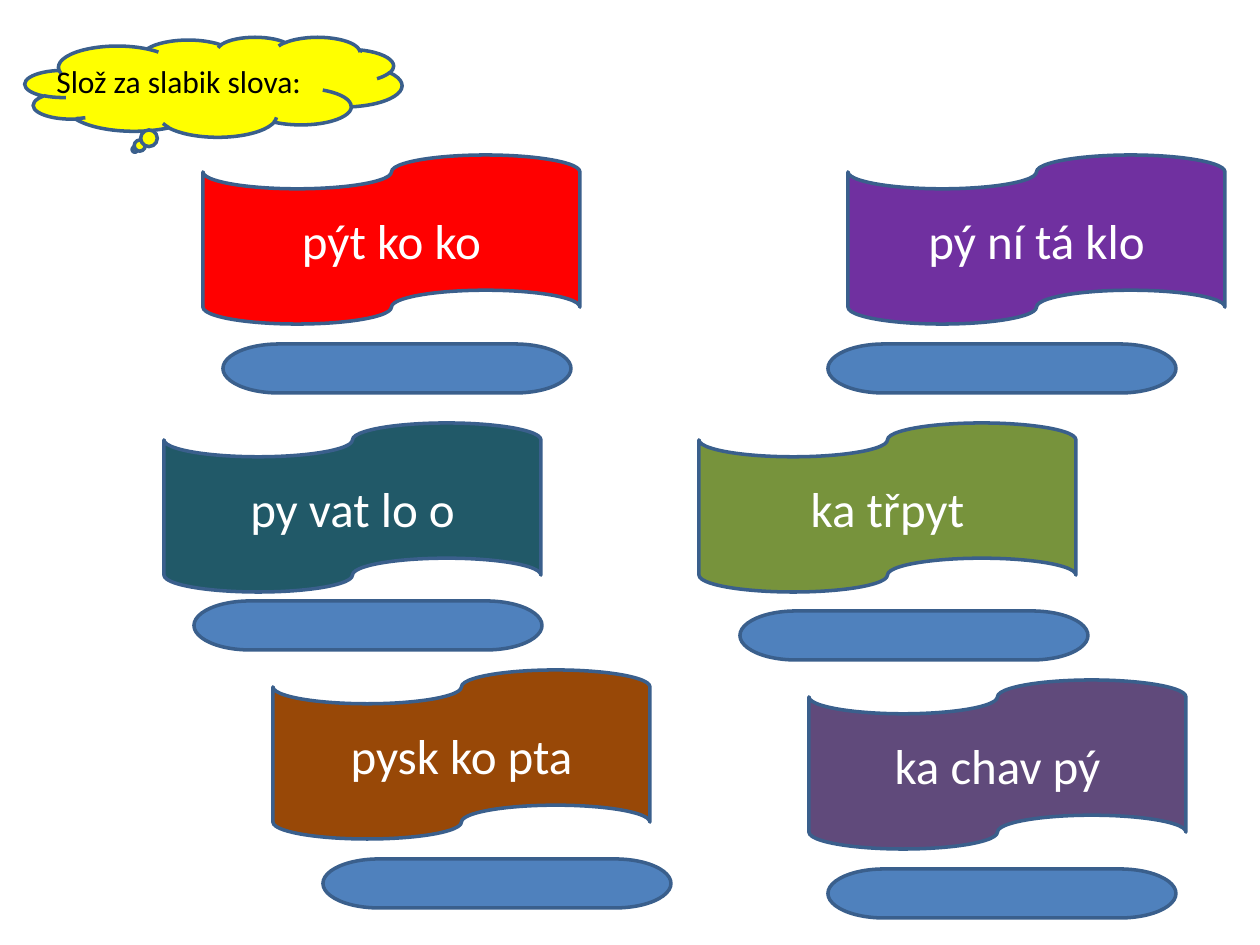
from pptx import Presentation
from pptx.dml.color import RGBColor
from pptx.enum.shapes import MSO_SHAPE
from pptx.enum.text import MSO_ANCHOR, MSO_AUTO_SIZE, PP_ALIGN
from pptx.util import Emu, Pt

CLOUD = MSO_SHAPE.CLOUD_CALLOUT
TAPE = MSO_SHAPE.FLOWCHART_PUNCHED_TAPE
TERMINATOR = MSO_SHAPE.FLOWCHART_TERMINATOR
MIDDLE = MSO_ANCHOR.MIDDLE
CENTER = PP_ALIGN.CENTER
FIT_SHAPE = MSO_AUTO_SIZE.SHAPE_TO_FIT_TEXT

PX_PER_INCH = 126
FONT = "Calibri"
OUTLINE = "3A5F8C"
TAPE_SIZE = (377, 169)
ANSWER_SIZE = (348, 49)

# Syllables, fill, banner position, answer field position
WORDS = [
    ("pýt ko ko", "FF0000", (203, 155), (223, 344)),
    ("pý ní tá klo", "7030A0", (848, 155), (828, 344)),
    ("py vat lo o", "215968", (164, 423), (194, 601)),
    ("ka třpyt", "77933C", (699, 423), (740, 611)),
    ("pysk ko pta", "984807", (273, 670), (323, 859)),
    ("ka chav pý", "604A7B", (809, 680), (828, 869)),
]


def px(n):
    return Emu(round(n * 914400 / PX_PER_INCH))


def rgb(value):
    return RGBColor.from_string(value)


def format_text(p, size, color):
    for r in p.runs:
        r.font.name = FONT
        r.font.size = Pt(size)
        r.font.color.rgb = rgb(color)


def add_outlined(s, kind, pos, size, fill):
    sp = s.shapes.add_shape(kind, *map(px, pos + size))
    sp.shadow.inherit = False
    sp.fill.solid()
    sp.fill.fore_color.rgb = rgb(fill)
    sp.line.color.rgb = rgb(OUTLINE)
    sp.line.width = Pt(2)
    return sp


def add_banner(s, text, fill, pos):
    tf = add_outlined(s, TAPE, pos, TAPE_SIZE, fill).text_frame
    tf.vertical_anchor = MIDDLE
    tf.text = text
    p = tf.paragraphs[0]
    p.alignment = CENTER
    format_text(p, 28, "FFFFFF")


def add_label(s, text, pos, size):
    tf = s.shapes.add_textbox(*map(px, pos + size)).text_frame
    tf.word_wrap = True
    tf.auto_size = FIT_SHAPE
    tf.text = text
    format_text(tf.paragraphs[0], 18, "000000")


def main():
    prs = Presentation()
    prs.slide_width, prs.slide_height = px(1260), px(945)
    s = prs.slides.add_slide(prs.slide_layouts[6])

    # Instruction in a thought cloud
    add_outlined(s, CLOUD, (25, 37), (377, 100), "FFFF00")
    add_label(s, "Slož za slabik slova:", (44, 56), (655, 51))

    # Syllable banners, then the answer fields
    for text, fill, pos, _ in WORDS:
        add_banner(s, text, fill, pos)
    for *_, pos in WORDS:
        add_outlined(s, TERMINATOR, pos, ANSWER_SIZE, "4F81BD")

    prs.save("out.pptx")


if __name__ == "__main__":
    main()
